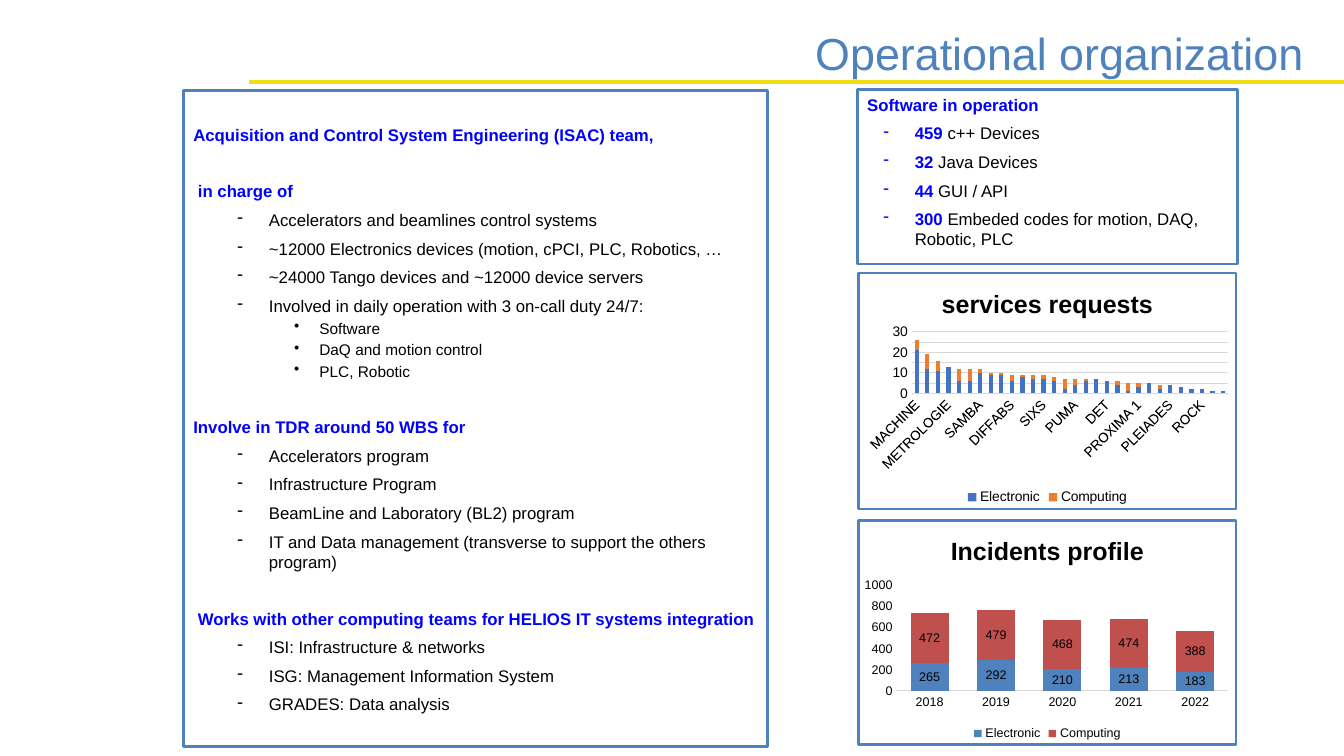
from lxml import etree
from pptx import Presentation
from pptx.chart import data
from pptx.dml.color import RGBColor
from pptx.enum import chart as chart_enum, shapes, text
from pptx.oxml import ns, parse_xml
from pptx.util import Pt

COLORS = {
    "white": "FFFFFF", "black": "000000", "frame": "4F81BD", "rule": "EEDE12",
    "heading": "0000FF", "grid": "D9D9D9", "blue": "4472C4", "orange": "ED7D31",
    "red": "C0504D",
}
FONT = "Arial"
FRAME_WIDTH = 2

# Left indent, heading, items; a nested tuple holds third-level items.
TEAM = [
    (0, "Acquisition and Control System Engineering (ISAC) team,", []),
    (3.3, "in charge of", [
        "Accelerators and beamlines control systems",
        "~12000 Electronics devices (motion, cPCI, PLC, Robotics, …",
        "~24000 Tango devices and ~12000 device servers",
        "Involved in daily operation with 3 on-call duty 24/7:",
        ("Software", "DaQ and motion control", "PLC, Robotic"),
    ]),
    (0, "Involve in TDR around 50 WBS for", [
        "Accelerators program",
        "Infrastructure Program",
        "BeamLine and Laboratory (BL2) program",
        "IT and Data management (transverse to support the others program)",
    ]),
    (3.3, "Works with other computing teams for HELIOS IT systems integration", [
        "ISI: Infrastructure & networks",
        "ISG: Management Information System",
        "GRADES: Data analysis",
    ]),
]
SOFTWARE = [
    ("459", "c++ Devices"),
    ("32", "Java Devices"),
    ("44", "GUI / API"),
    ("300", "Embeded codes for motion, DAQ, Robotic, PLC"),
]
REQUEST_PLACES = (
    "MACHINE MARS ANATOMIX METROLOGIE CRISTAL GALAXIES SAMBA NANOSCOPIUM TEMPO "
    "DIFFABS PSICHE SIRIUS SIXS DEIMOS ANTARES PUMA PX2 SEXTANTS DET SWING LUCIA"
).split() + ["PROXIMA 1"] + "SMIS ODE PLEIADES CASSIOPEE AILES ROCK DETECTEUR HERMES".split()
REQUESTS = [
    ("Electronic", "blue", [21, 12, 11, 13, 6, 6, 10, 9, 9, 6, 8, 7, 7, 6, 2,
                            4, 6, 7, 6, 4, 1, 3, 5, 2, 4, 3, 2, 2, 1, 1]),
    ("Computing", "orange", [5, 7, 5, None, 6, 6, 2, 1, 1, 3, 1, 2, 2, 2, 5,
                             3, 1, None, None, 2, 4, 2, None, 2] + [None] * 6),
]
INCIDENT_YEARS = ["2018", "2019", "2020", "2021", "2022"]
INCIDENTS = [
    ("Electronic", "frame", [265, 292, 210, 213, 183]),
    ("Computing", "red", [472, 479, 468, 474, 388]),
]


def rgb(name):
    return RGBColor.from_string(COLORS[name])


def set_font(font, size, color="black", bold=False):
    font.name, font.size, font.bold = FONT, Pt(size), bold
    font.color.rgb = rgb(color)


def add_frame(slide, box, top_inset=3.6):
    """Add a bordered white rectangle and return its text frame."""
    shape = slide.shapes.add_shape(shapes.MSO_SHAPE.RECTANGLE, *map(Pt, box))
    shape.shadow.inherit = False
    shape.fill.solid()
    shape.fill.fore_color.rgb = rgb("white")
    shape.line.color.rgb = rgb("frame")
    shape.line.width = Pt(FRAME_WIDTH)
    frame = shape.text_frame
    frame.word_wrap = True
    frame.vertical_anchor = text.MSO_ANCHOR.TOP
    frame.margin_top = Pt(top_inset)
    return frame


def add_paragraph(frame, before=6, size=12, color="black", bold=False,
                  left=0, hanging=0, bullet=None, bullet_color="black"):
    first = not frame.paragraphs[0].runs
    paragraph = frame.paragraphs[0] if first else frame.add_paragraph()
    properties = paragraph._p.get_or_add_pPr()
    properties.set("marL", str(Pt(left)))
    properties.set("indent", str(-Pt(hanging)))
    if bullet:
        tint = etree.SubElement(properties, ns.qn("a:buClr"))
        etree.SubElement(tint, ns.qn("a:srgbClr"), val=COLORS[bullet_color])
        etree.SubElement(properties, ns.qn("a:buChar"), char=bullet)
    paragraph.alignment = text.PP_ALIGN.LEFT
    paragraph.space_before = Pt(0 if first else before)
    set_font(paragraph.font, size, color, bold)
    # The bullet takes its size from the end-of-paragraph properties.
    etree.SubElement(paragraph._p, ns.qn("a:endParaRPr"), sz=str(size * 100))
    return paragraph


def add_title(slide, box):
    left, top, width, height = box
    rule_y = top + 43.5
    rule = slide.shapes.add_connector(
        shapes.MSO_CONNECTOR.STRAIGHT, Pt(960), Pt(rule_y), Pt(left), Pt(rule_y))
    rule.line.color.rgb = rgb("rule")
    rule.line.width = Pt(3)
    etree.SubElement(rule._element.spPr, ns.qn("a:effectLst"))
    frame = slide.shapes.add_textbox(*map(Pt, box)).text_frame
    frame.word_wrap = True
    frame.vertical_anchor = text.MSO_ANCHOR.MIDDLE
    paragraph = frame.paragraphs[0]
    paragraph.text = "Operational organization"
    paragraph.alignment = text.PP_ALIGN.RIGHT
    set_font(paragraph.font, 32, "frame")


def add_team(slide, box):
    frame = add_frame(slide, box, top_inset=24)
    for left, heading, items in TEAM:
        add_paragraph(frame, before=26.2, color="heading", bold=True,
                      left=left).add_run().text = heading
        for item in items:
            if isinstance(item, str):
                add_paragraph(frame, left=54, hanging=22.5, bullet="-").add_run().text = item
                continue
            for detail in item:
                add_paragraph(frame, before=2.2, size=11, left=90, hanging=18,
                              bullet="•").add_run().text = detail


def add_software(slide, box):
    frame = add_frame(slide, box)
    add_paragraph(frame, color="heading", bold=True).add_run().text = "Software in operation"
    for count, label in SOFTWARE:
        paragraph = add_paragraph(frame, left=34, hanging=22.5, bullet="-",
                                  bullet_color="heading")
        number = paragraph.add_run()
        number.text = count + " "
        set_font(number.font, 12, "heading", True)
        paragraph.add_run().text = label


def place_plot(chart, x, y, w, h):
    """Fix the inner plot area, in fractions of the chart."""
    plot_area = chart._chartSpace.chart.plotArea
    for old in plot_area.findall(ns.qn("c:layout")):
        plot_area.remove(old)
    layout = etree.Element(ns.qn("c:layout"))
    manual = etree.SubElement(layout, ns.qn("c:manualLayout"))
    for tag, value in (("layoutTarget", "inner"), ("xMode", "edge"), ("yMode", "edge"),
                       ("x", x), ("y", y), ("w", w), ("h", h)):
        etree.SubElement(manual, ns.qn("c:" + tag), val=str(value))
    plot_area.insert(0, layout)


def add_stacked_chart(slide, box, title, categories, series_list, size, gap, top, step, plot):
    chart_data = data.CategoryChartData(number_format="0")
    chart_data.categories = categories
    for name, _, values in series_list:
        chart_data.add_series(name, values)
    chart = slide.shapes.add_chart(
        chart_enum.XL_CHART_TYPE.COLUMN_STACKED, *map(Pt, box), chart_data).chart
    set_font(chart.font, size)
    chart._chartSpace.chart.addnext(parse_xml(
        f'<c:spPr {ns.nsdecls("c", "a")}><a:solidFill><a:srgbClr val="{COLORS["white"]}"/>'
        f'</a:solidFill><a:ln w="{Pt(FRAME_WIDTH)}"><a:solidFill>'
        f'<a:srgbClr val="{COLORS["frame"]}"/></a:solidFill></a:ln></c:spPr>'))
    chart.has_title = True
    paragraph = chart.chart_title.text_frame.paragraphs[0]
    paragraph.add_run().text = title
    set_font(paragraph.font, 18, bold=True)
    chart.has_legend = True
    chart.legend.position = chart_enum.XL_LEGEND_POSITION.BOTTOM
    chart.legend.include_in_layout = False
    set_font(chart.legend.font, size)
    for axis in (chart.category_axis, chart.value_axis):
        axis.major_tick_mark = axis.minor_tick_mark = chart_enum.XL_TICK_MARK.NONE
        axis.has_major_gridlines = False
        axis.format.line.fill.background()
        set_font(axis.tick_labels.font, size)
    chart.value_axis.minimum_scale = 0
    chart.value_axis.maximum_scale = top
    chart.value_axis.major_unit = step
    bars = chart.plots[0]
    bars.gap_width, bars.overlap, bars.vary_by_categories = gap, 100, False
    for series, (_, color, _) in zip(bars.series, series_list):
        series.format.fill.solid()
        series.format.fill.fore_color.rgb = rgb(color)
    place_plot(chart, *plot)
    return chart


def set_grid_line(line):
    line.color.rgb = rgb("grid")
    line.width = Pt(0.75)


def add_requests(slide, box):
    chart = add_stacked_chart(slide, box, "services requests", REQUEST_PLACES, REQUESTS,
                              10, 150, 30, 5, (0.14, 0.25, 0.84, 0.26))
    set_grid_line(chart.value_axis.major_gridlines.format.line)
    axis = chart.category_axis._element
    axis.txPr.find(ns.qn("a:bodyPr")).set("rot", "-2700000")
    skip = etree.Element(ns.qn("c:tickLblSkip"), val="3")
    axis.find(ns.qn("c:noMultiLvlLbl")).addprevious(skip)


def add_incidents(slide, box):
    chart = add_stacked_chart(slide, box, "Incidents profile", INCIDENT_YEARS, INCIDENTS,
                              9, 75, 1000, 200, (0.1, 0.29, 0.88, 0.47))
    set_grid_line(chart.category_axis.format.line)
    for series in chart.plots[0].series:
        series.data_labels.show_value = True
        set_font(series.data_labels.font, 9)


def main():
    presentation = Presentation()
    presentation.slide_width, presentation.slide_height = Pt(960), Pt(540)
    slide = presentation.slides.add_slide(presentation.slide_layouts[6])
    add_title(slide, (178, 15, 760.5, 44.6))
    add_team(slide, (131, 64.8, 417, 468.7))
    add_software(slide, (612.4, 64, 271.5, 124.6))
    add_requests(slide, (612.4, 194, 271.5, 170.6))
    add_incidents(slide, (612.4, 371, 271.5, 162))
    presentation.save("out.pptx")


if __name__ == "__main__":
    main()
